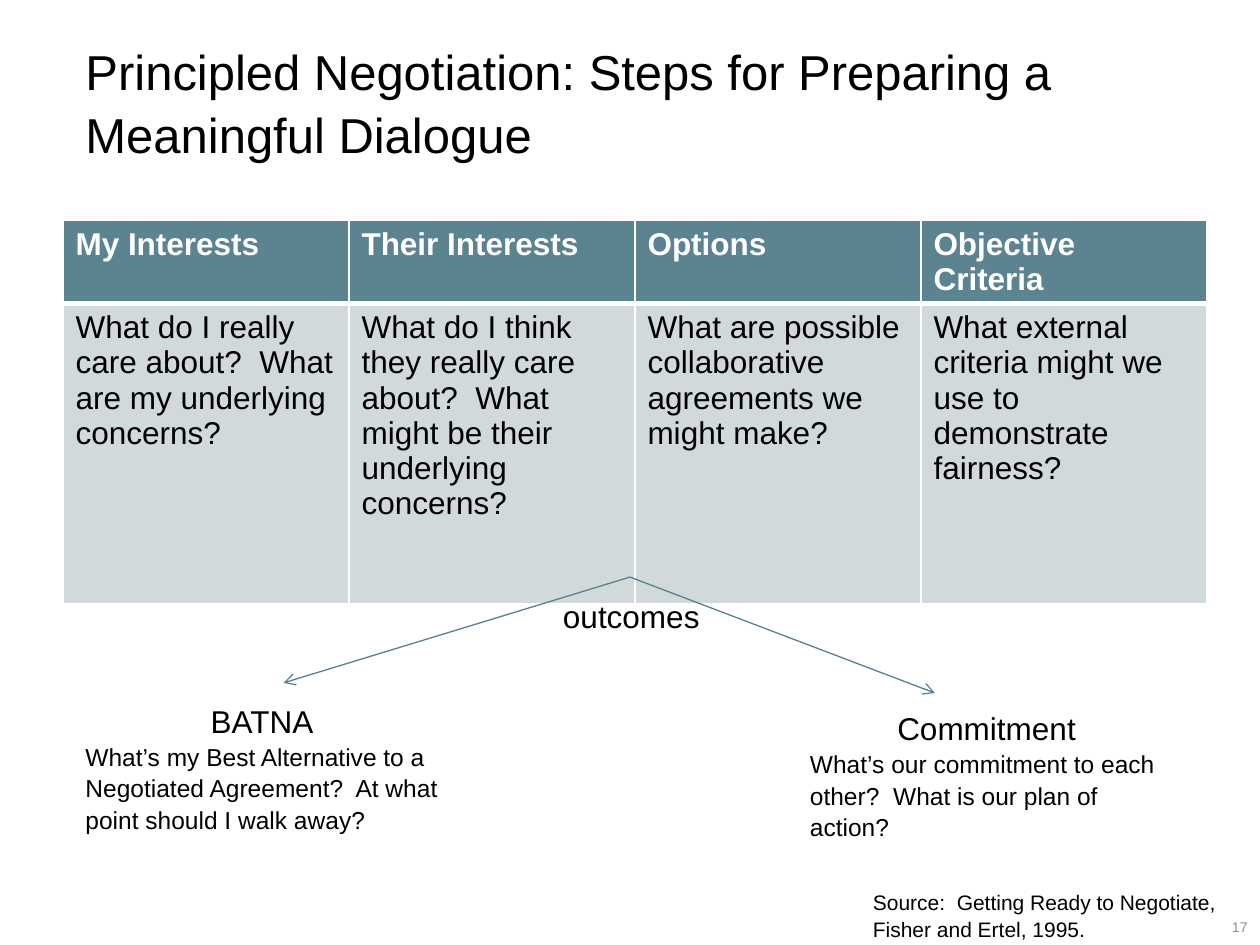
"""Build the slide on steps for preparing a principled negotiation."""
from lxml import etree
from pptx import Presentation
from pptx.dml import color
from pptx.enum import shapes, text
from pptx.oxml import ns
from pptx.util import Inches, Pt

TEAL = color.RGBColor(0x5C, 0x83, 0x90)
PALE = color.RGBColor(0xD2, 0xD9, 0xDB)
ARROW = color.RGBColor(0x59, 0x81, 0x8E)
GRAY = color.RGBColor(0x8A, 0x93, 0x86)
BLACK = color.RGBColor(0, 0, 0)
WHITE = color.RGBColor(255, 255, 255)
LEFT, CENTER, RIGHT = text.PP_ALIGN.LEFT, text.PP_ALIGN.CENTER, text.PP_ALIGN.RIGHT


def write(paragraph, content, size=18, fill=BLACK, bold=False, align=LEFT, spacing=1.07):
    paragraph.text = content
    paragraph.alignment = align
    paragraph.line_spacing = spacing
    paragraph.font.name = "Arial"
    paragraph.font.size = Pt(size)
    paragraph.font.bold = bold
    paragraph.font.color.rgb = fill


def add_border(cell, side, width):
    line = etree.SubElement(cell._tc.get_or_add_tcPr(), ns.qn(f"a:ln{side}"), w=str(Pt(width)))
    solid = etree.SubElement(line, ns.qn("a:solidFill"))
    etree.SubElement(solid, ns.qn("a:srgbClr"), val=str(WHITE))


presentation = Presentation()
presentation.slide_width = Inches(10)
presentation.slide_height = Inches(7.5)
slide = presentation.slides.add_slide(presentation.slide_layouts[6])

columns = [
    ("My Interests", "What do I really care about?  What are my underlying concerns?"),
    ("Their Interests",
     "What do I think they really care about?  What might be their underlying concerns?"),
    ("Options", "What are possible collaborative agreements we might make?"),
    ("Objective Criteria", "What external criteria might we use to demonstrate fairness?"),
]
row_styles = [
    (0.5, TEAL, WHITE, True, {"L": 1, "R": 1, "T": 1, "B": 3}),
    (2.38, PALE, BLACK, False, {"L": 1, "R": 1, "T": 3, "B": 1}),
]
table = slide.shapes.add_table(
    len(row_styles), len(columns), Inches(0.5), Inches(1.75), Inches(9.08), Inches(2.88)
).table
for row, (height, background, ink, bold, borders) in enumerate(row_styles):
    table.rows[row].height = Inches(height)
    for column, contents in enumerate(columns):
        cell = table.cell(row, column)
        write(cell.text_frame.paragraphs[0], contents[row], fill=ink, bold=bold, spacing=1.0)
        for side, width in borders.items():
            add_border(cell, side, width)
        cell.fill.solid()
        cell.fill.fore_color.rgb = background

for end_x, end_y in [(2.25, 5.42), (7.42, 5.5)]:
    arrow = slide.shapes.add_connector(
        shapes.MSO_CONNECTOR.STRAIGHT, Inches(5), Inches(4.58), Inches(end_x), Inches(end_y)
    )
    arrow.line.color.rgb = ARROW
    arrow.line.width = Pt(0.75)
    etree.SubElement(arrow.line._get_or_add_ln(), ns.qn("a:tailEnd"), type="arrow")
    etree.SubElement(arrow._element.spPr, ns.qn("a:effectLst"))

heading = {"align": CENTER}
detail = {"size": 14}
text_boxes = [
    ((0.58, 0.25, 8.75, 1.04),
     [("Principled Negotiation: Steps for Preparing a Meaningful Dialogue", {"size": 28})]),
    ((0.58, 5.5, 3, 1.11),
     [("BATNA", heading),
      ("What’s my Best Alternative to a Negotiated Agreement?  "
       "At what point should I walk away?", detail)]),
    ((6.33, 5.56, 3, 1.11),
     [("Commitment", heading),
      ("What’s our commitment to each other?  What is our plan of action?", detail)]),
    ((6.83, 7, 3, 0.5),
     [("Source:  Getting Ready to Negotiate, Fisher and Ertel, 1995.", {"size": 12})]),
    ((4.37, 4.67, 1.3, 0.4), [("outcomes", {})]),
    ((9, 7.23, 1, 0.27), [("17", {"size": 8, "fill": GRAY, "align": RIGHT})]),
]
for box, lines in text_boxes:
    frame = slide.shapes.add_textbox(*map(Inches, box)).text_frame
    frame.word_wrap = True
    for index, (content, style) in enumerate(lines):
        paragraph = frame.add_paragraph() if index else frame.paragraphs[0]
        write(paragraph, content, **style)

presentation.save("out.pptx")
